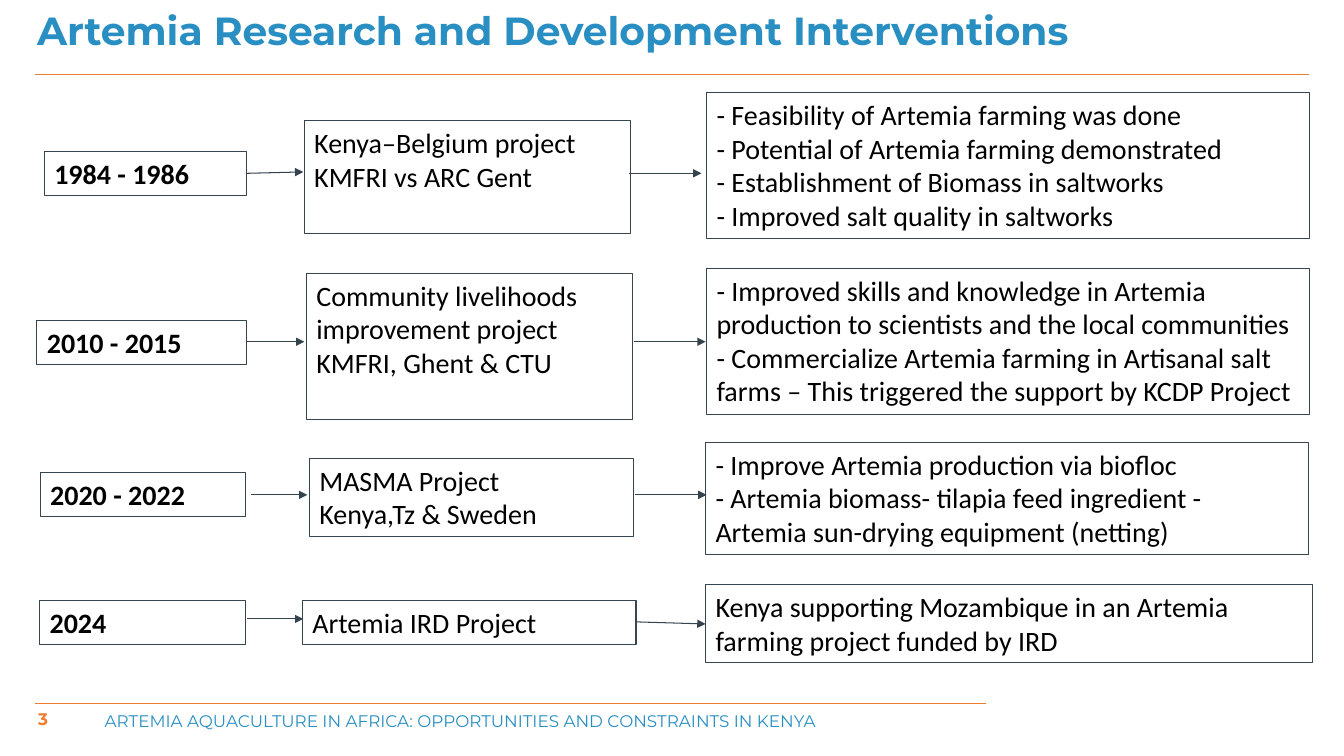
from lxml.etree import SubElement
from pptx import Presentation
from pptx.dml.color import RGBColor
from pptx.enum.shapes import MSO_CONNECTOR as Connector, MSO_SHAPE as Shape
from pptx.enum.text import MSO_ANCHOR as Anchor, MSO_AUTO_SIZE as AutoSize, PP_ALIGN as Align
from pptx.oxml.ns import qn
from pptx.util import Pt

# Content
TITLE = "Artemia Research and Development Interventions"
FOOTER = "ARTEMIA AQUACULTURE IN AFRICA: OPPORTUNITIES AND CONSTRAINTS IN KENYA"
PAGE_NUMBER = "3"
COLORS = {"blue": "298FC2", "orange": "ED7D31", "border": "36454F",
          "arrow": "34444E", "text": "000000"}

# Each row: boxes as (left, top, width, height in lines, paragraphs),
# then arrows as (x1, y1, x2, y2)
ROWS = [
    ([(31.7, 108.2, 144.7, 1, ["1984 - 1986"]),
      (217.4, 86.4, 233.3, 3, ["Kenya–Belgium project", "KMFRI vs ARC Gent"]),
      (504.7, 66.2, 430.6, 4, ["- Feasibility of Artemia farming was done",
                               "- Potential of Artemia farming demonstrated",
                               "- Establishment of Biomass in saltworks",
                               "- Improved salt quality in saltworks"])],
     [(176.4, 123.8, 216.7, 122.8), (449.3, 123.8, 501.1, 123.8)]),
    ([(26.4, 229, 149.8, 1, ["2010 - 2015"]),
      (218.9, 195.1, 233.3, 4, ["Community livelihoods improvement project",
                                "KMFRI, Ghent & CTU"]),
      (504.7, 191.5, 430.6, 4,
       ["- Improved skills and knowledge in Artemia production to scientists "
        "and the local communities",
        "- Commercialize Artemia farming in Artisanal salt farms – This "
        "triggered the support by KCDP Project"])],
     [(176.4, 244.1, 217.4, 244.1), (452.9, 244.1, 504, 244.1)]),
    ([(28.8, 337.5, 146.9, 1, ["2020 - 2022"]),
      (221, 327.4, 231.8, 2, ["MASMA Project", "Kenya,Tz & Sweden"]),
      (504, 316, 430.6, 3,
       ["- Improve Artemia production via biofloc",
        "- Artemia biomass- tilapia feed ingredient - Artemia sun-drying "
        "equipment (netting)"])],
     [(179.3, 353.5, 219.6, 353.5), (453.6, 353.5, 504.7, 353.5)]),
    ([(28.4, 428.6, 146.9, 1, ["2024"]),
      (216, 428.6, 238.3, 1, ["Artemia IRD Project"]),
      (504, 417.6, 433.4, 2, ["Kenya supporting Mozambique in an Artemia "
                              "farming project funded by IRD"])],
     [(176.4, 442.1, 216.7, 442.1), (454.3, 444.2, 504, 445.7)]),
]
LINE_HEIGHT, BOX_PADDING = 24.3, 7.2


def color(name):
    return RGBColor.from_string(COLORS[name])


def write(shape, paragraphs, font, size, color_name, bold=False, anchor=Anchor.TOP):
    frame = shape.text_frame
    frame.text = "\n".join(paragraphs)
    frame.word_wrap = True
    frame.auto_size = AutoSize.NONE
    frame.vertical_anchor = anchor
    for para in frame.paragraphs:
        para.alignment = Align.LEFT
        for span in para.runs:
            span.font.name = font
            span.font.size = Pt(size)
            span.font.bold = bold
            span.font.color.rgb = color(color_name)
    return frame


def place(shape, left, top, width, height):
    shape.left, shape.top = Pt(left), Pt(top)
    shape.width, shape.height = Pt(width), Pt(height)


def add_line(page, x1, y1, x2, y2, color_name, arrow=False):
    line = page.shapes.add_connector(Connector.STRAIGHT, Pt(x1), Pt(y1), Pt(x2), Pt(y2))
    line.line.color.rgb = color(color_name)
    line.line.width = Pt(0.75)
    if arrow:
        SubElement(line.line._get_or_add_ln(), qn("a:tailEnd"), type="triangle")
    SubElement(line._element.spPr, qn("a:effectLst"))


def add_box(page, left, top, width, lines, paragraphs, bold):
    height = lines * LINE_HEIGHT + BOX_PADDING
    box = page.shapes.add_shape(Shape.RECTANGLE, Pt(left), Pt(top), Pt(width), Pt(height))
    box.shadow.inherit = False
    box.fill.background()
    box.line.color.rgb = color("border")
    box.line.width = Pt(0.75)
    write(box, paragraphs, "Calibri", 20, "text", bold)


def main():
    deck = Presentation()
    deck.slide_width, deck.slide_height = Pt(960), Pt(540)
    page = deck.slides.add_slide(deck.slide_layouts[5])

    # Title and rules
    title = page.shapes.title
    place(title, 26.6, 8.6, 778.4, 40.3)
    frame = write(title, [TITLE], "Montserrat", 28, "blue", bold=True)
    frame.margin_left = frame.margin_top = frame.margin_right = frame.margin_bottom = 0
    frame.paragraphs[0].line_spacing = 0.9
    add_line(page, 25.2, 53.3, 935.3, 53.3, "orange")
    add_line(page, 25.2, 502.6, 704.2, 502.6, "orange")

    # Footer
    number = page.shapes.add_textbox(Pt(20.2), Pt(505.4), Pt(49), Pt(16.6))
    write(number, [PAGE_NUMBER], "Montserrat", 12, "orange", True, Anchor.MIDDLE)
    footer = page.shapes.add_textbox(Pt(67.7), Pt(504), Pt(637.2), Pt(21.6))
    write(footer, [FOOTER], "Montserrat", 12, "blue")

    # Timeline rows: period, project, results
    for boxes, arrows in ROWS:
        for column, box in enumerate(boxes):
            add_box(page, *box, bold=column == 0)
        for ends in arrows:
            add_line(page, *ends, "arrow", arrow=True)

    deck.save("out.pptx")


if __name__ == "__main__":
    main()
